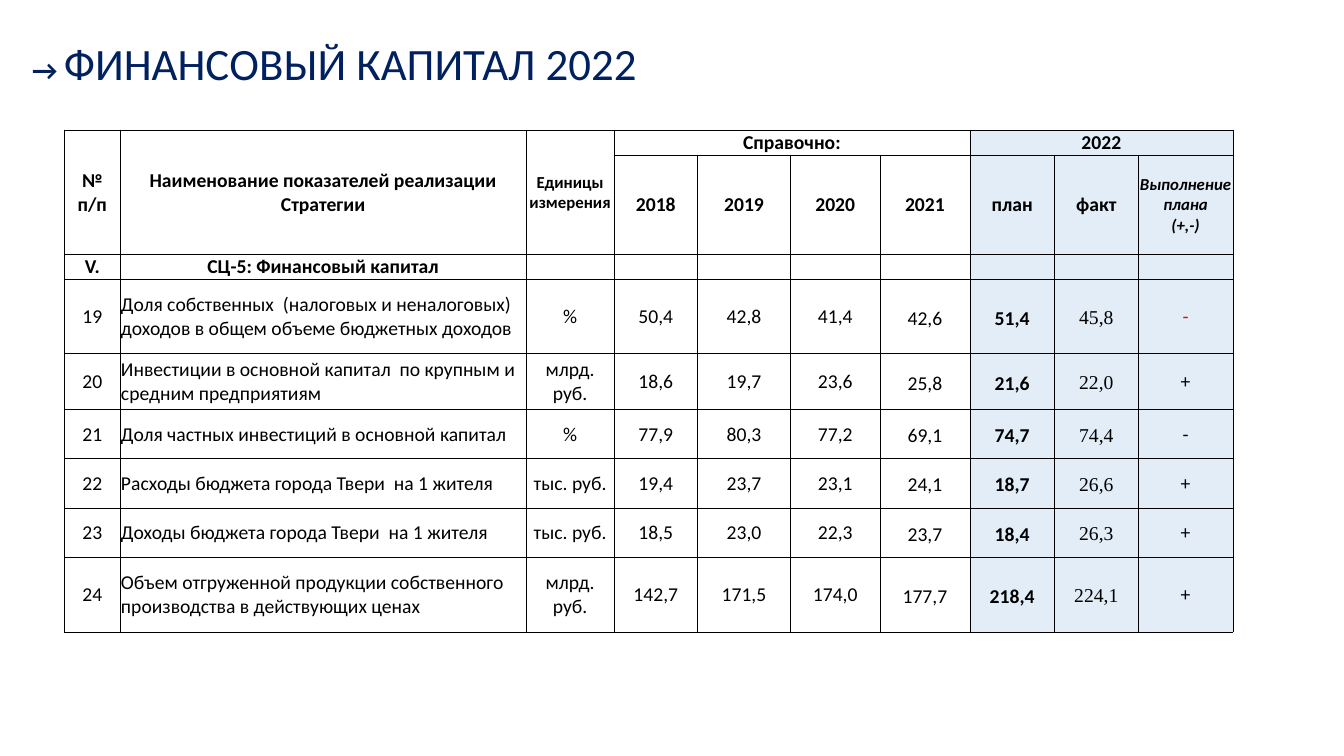
from lxml import etree
from pptx import Presentation
from pptx.dml.color import RGBColor
from pptx.enum.text import MSO_ANCHOR, MSO_AUTO_SIZE, PP_ALIGN
from pptx.oxml import parse_xml
from pptx.oxml.ns import nsdecls, qn
from pptx.util import Inches, Pt

NAVY = RGBColor(0x00, 0x20, 0x60)
BLACK = RGBColor(0x00, 0x00, 0x00)
RED = RGBColor(0xFF, 0x00, 0x00)
WHITE = RGBColor(0xFF, 0xFF, 0xFF)
PALE_BLUE = RGBColor(0xDE, 0xEB, 0xF7)
CENTER = PP_ALIGN.CENTER
LEFT = PP_ALIGN.LEFT
TOP = MSO_ANCHOR.TOP
MIDDLE = MSO_ANCHOR.MIDDLE
FIT_SHAPE = MSO_AUTO_SIZE.SHAPE_TO_FIT_TEXT

SANS = "Calibri"
SERIF = "Times New Roman"
COLUMN_WIDTHS = [0.55, 4.03, 0.87, 0.83, 0.92, 0.89, 0.89, 0.84, 0.83, 0.94]
ROW_HEIGHTS = [0.25, 0.98, 0.25, 0.74, 0.55, 0.49, 0.49, 0.49, 0.74]
NAME, UNIT, LAST_YEAR, PLAN, FACT, RESULT = 1, 2, 6, 7, 8, 9
FIRST_DATA_ROW = 3
MERGES = [(0, 0, 1, 0), (0, 1, 1, 1), (0, 2, 1, 2), (0, 3, 0, 6), (0, 7, 0, 9)]
ROWS = [
    ["№ п/п", "Наименование показателей реализации Стратегии", "Единицы измерения",
     "Справочно:", "", "", "", "2022", "", ""],
    ["", "", "", "2018", "2019", "2020", "2021", "план", "факт", "Выполнение плана\n(+,-)"],
    ["V.", "СЦ-5: Финансовый капитал", "", "", "", "", "", "", "", ""],
    ["19", "Доля собственных  (налоговых и неналоговых) доходов в общем объеме бюджетных доходов",
     "%", "50,4", "42,8", "41,4", "42,6", "51,4", "45,8", "-"],
    ["20", "Инвестиции в основной капитал  по крупным и средним предприятиям",
     "млрд. руб.", "18,6", "19,7", "23,6", "25,8", "21,6", "22,0", "+"],
    ["21", "Доля частных инвестиций в основной капитал",
     "%", "77,9", "80,3", "77,2", "69,1", "74,7", "74,4", "-"],
    ["22", "Расходы бюджета города Твери  на 1 жителя",
     "тыс. руб.", "19,4", "23,7", "23,1", "24,1", "18,7", "26,6", "+"],
    ["23", "Доходы бюджета города Твери  на 1 жителя",
     "тыс. руб.", "18,5", "23,0", "22,3", "23,7", "18,4", "26,3", "+"],
    ["24", "Объем отгруженной продукции собственного производства в действующих ценах",
     "млрд. руб.", "142,7", "171,5", "174,0", "177,7", "218,4", "224,1", "+"],
]


def add_span(para, text, size, color, bold=False, italic=False, font=SANS):
    """Append one formatted run to a paragraph."""
    span = para.add_run()
    span.text = text
    span.font.name = font
    span.font.size = Pt(size)
    span.font.bold = bold
    span.font.italic = italic
    span.font.color.rgb = color


def place_title(page, left, top, width, height):
    """Place the arrow and heading in the title placeholder."""
    title = page.shapes.title
    title.left, title.top = Inches(left), Inches(top)
    title.width, title.height = Inches(width), Inches(height)
    frame = title.text_frame
    frame.word_wrap = False
    frame.auto_size = FIT_SHAPE
    frame.vertical_anchor = TOP
    para = frame.paragraphs[0]
    para.alignment = CENTER
    add_span(para, "→ ", 20, NAVY, bold=True)
    add_span(para, "ФИНАНСОВЫЙ КАПИТАЛ 2022", 32, NAVY)


def paint_cell(cell, column):
    """Give a cell thin black borders and the fill of its column."""
    properties = cell._tc.get_or_add_tcPr()
    for side in ("lnL", "lnR", "lnT", "lnB"):
        properties.append(parse_xml(
            f'<a:{side} {nsdecls("a")} w="6350"><a:solidFill>'
            f'<a:srgbClr val="{BLACK}"/></a:solidFill></a:{side}>'))
    cell.fill.solid()
    cell.fill.fore_color.rgb = PALE_BLUE if column >= PLAN else WHITE
    if column >= PLAN:
        color = properties.find(qn("a:solidFill")).find(qn("a:srgbClr"))
        etree.SubElement(color, qn("a:alpha")).set("val", "85000")


def write_cell(cell, text, row, column):
    """Write a cell's text in the style of its row and column."""
    is_data = row >= FIRST_DATA_ROW
    is_wide_set = is_data and LAST_YEAR <= column <= FACT
    is_small = row < 2 and column in (UNIT, RESULT)
    cell.vertical_anchor = MIDDLE
    cell.margin_left = cell.margin_right = Inches(0.07 if is_wide_set else 0.01)
    cell.margin_top = Inches(0 if is_wide_set else 0.01)
    cell.margin_bottom = 0
    frame = cell.text_frame
    for index, line in enumerate(text.split("\n")):
        para = frame.add_paragraph() if index else frame.paragraphs[0]
        para.alignment = LEFT if is_data and column == NAME else CENTER
        if is_wide_set:
            para.line_spacing = 1.15
        if line:
            add_span(para, line, 12 if is_small else 14,
                     RED if row == FIRST_DATA_ROW and column == RESULT else BLACK,
                     bold=not is_data or column == PLAN,
                     italic=row == 1 and column == RESULT,
                     font=SERIF if is_data and column == FACT else SANS)
        else:
            etree.SubElement(para._p, qn("a:endParaRPr")).set("sz", "1400")


def place_indicators(page, left, top):
    """Place the table of financial indicators."""
    table = page.shapes.add_table(
        len(ROW_HEIGHTS), len(COLUMN_WIDTHS), Inches(left), Inches(top),
        Inches(sum(COLUMN_WIDTHS)), Inches(sum(ROW_HEIGHTS))).table
    table.first_row = False
    table.horz_banding = False
    for column, width in zip(table.columns, COLUMN_WIDTHS):
        column.width = Inches(width)
    for row, height in zip(table.rows, ROW_HEIGHTS):
        row.height = Inches(height)
    for row, texts in enumerate(ROWS):
        for column, text in enumerate(texts):
            cell = table.cell(row, column)
            paint_cell(cell, column)
            write_cell(cell, text, row, column)
    for first_row, first_column, last_row, last_column in MERGES:
        table.cell(first_row, first_column).merge(table.cell(last_row, last_column))


def main():
    """Build and save the deck."""
    deck = Presentation()
    deck.slide_width, deck.slide_height = Inches(13.33), Inches(7.5)
    page = deck.slides.add_slide(deck.slide_layouts[5])
    place_title(page, 0.19, 0.3, 6.26, 0.64)
    place_indicators(page, 0.64, 1.29)
    deck.save("out.pptx")


if __name__ == "__main__":
    main()
